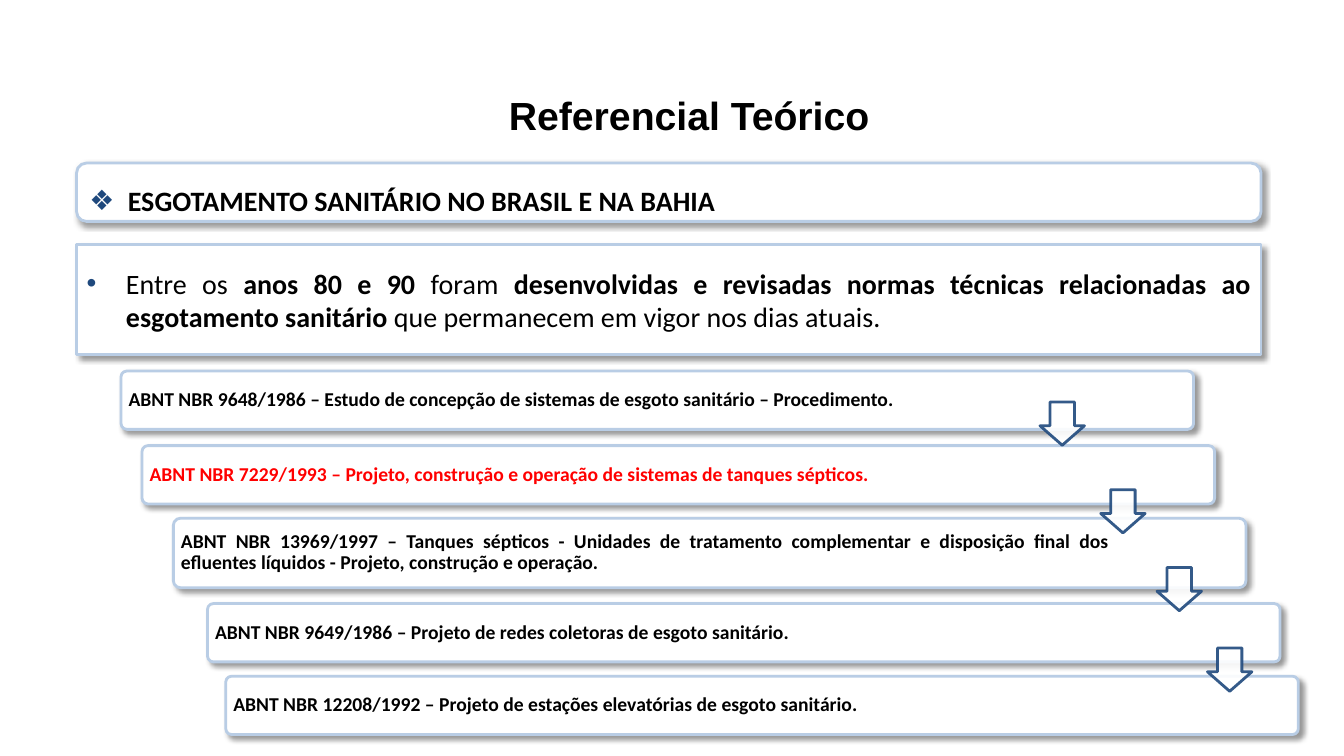
from lxml.etree import SubElement
from pptx import Presentation
from pptx.dml.color import RGBColor
from pptx.enum.shapes import MSO_SHAPE as Form
from pptx.enum.text import MSO_ANCHOR as Anchor, MSO_AUTO_SIZE as Fit, PP_ALIGN as Align
from pptx.oxml.ns import qn
from pptx.util import Cm, Pt

BLACK, WHITE, RED = "000000", "FFFFFF", "FF0000"
NAVY, PALE = "1F497D", "B9CDE5"


def color(code):
    return RGBColor.from_string(code)


def node(parent, tag, **attrs):
    return SubElement(parent, qn(tag), attrs)


class Deck:
    font = "Calibri"
    inset = 0.15

    def __init__(self, wide, high):
        self.prs = Presentation()
        self.prs.slide_width, self.prs.slide_height = Cm(wide), Cm(high)
        self.slide = self.prs.slides.add_slide(self.prs.slide_layouts[1])

    def place(self, shape, box):
        shape.left, shape.top, shape.width, shape.height = map(Cm, box)

    def paint(self, shape, line):
        shape.fill.solid()
        shape.fill.fore_color.rgb = color(WHITE)
        shape.line.color.rgb = color(line)
        shape.line.width = Pt(2)
        shape.shadow.inherit = False

    def shade(self, shape):
        """Cast a soft shadow to the lower right."""
        effects = shape._element.spPr.find(qn("a:effectLst"))
        outer = node(effects, "a:outerShdw", blurRad=str(Pt(4)), dist=str(Pt(3)),
                     dir="2700000", algn="tl", rotWithShape="0")
        tint = node(outer, "a:srgbClr", val=BLACK)
        node(tint, "a:alpha", val="40000")

    def label(self, shape, runs, size, align=Align.JUSTIFY, gap=1, bullet=None,
              hang=0, ink=BLACK, font=None):
        """Fill the shape with one paragraph of (text, bold) runs."""
        frame = shape.text_frame
        frame.auto_size = Fit.NONE
        frame.word_wrap = True
        frame.vertical_anchor = Anchor.MIDDLE
        para = frame.paragraphs[0]
        para.alignment = align
        para.line_spacing = gap
        para.space_before = Pt(0)
        if bullet:
            props = para._p.get_or_add_pPr()
            props.set("marL", str(Cm(hang)))
            props.set("indent", str(-Cm(hang)))
            node(node(props, "a:buClr"), "a:srgbClr", val=NAVY)
            node(props, "a:buFont", typeface="Arial")
            node(props, "a:buChar", char=bullet)
        for text, bold in runs:
            run = para.add_run()
            run.text = text
            run.font.name = font or self.font
            run.font.size = Pt(size)
            run.font.bold = bold
            run.font.color.rgb = color(ink)

    def title(self, text, box):
        shape = self.slide.shapes.title
        self.place(shape, box)
        self.label(shape, [(text, True)], 28, Align.LEFT, font="Arial")
        shape.text_frame.word_wrap = False

    def body(self, runs, box):
        shape = self.slide.placeholders[1]
        self.place(shape, box)
        self.paint(shape, PALE)
        self.shade(shape)
        self.label(shape, runs, 20, bullet="•", hang=0.99)

    def panel(self, box, curve):
        shape = self.slide.shapes.add_shape(Form.ROUNDED_RECTANGLE, *map(Cm, box))
        shape.adjustments[0] = curve
        self.paint(shape, PALE)
        self.shade(shape)
        return shape

    def header(self, text, box):
        shape = self.panel(box, 0.17)
        self.label(shape, [(text, True)], 20, gap=1.5, bullet="❖", hang=0.97)

    def card(self, text, left, top, high, ink):
        self.panel((left, top, 27.03, high), 0.1)
        box = left + 0.04, top + 0.04, 23.7, high - 0.08
        shape = self.slide.shapes.add_textbox(*map(Cm, box))
        frame = shape.text_frame
        frame.margin_left = frame.margin_right = Cm(self.inset)
        frame.margin_top = frame.margin_bottom = Cm(self.inset)
        self.label(shape, [(text, True)], 14, gap=0.9, ink=ink)

    def arrow(self, left, top):
        shape = self.slide.shapes.add_shape(
            Form.DOWN_ARROW, Cm(left), Cm(top), Cm(1.12), Cm(1.09))
        shape.adjustments[0], shape.adjustments[1] = 0.55, 0.45
        self.paint(shape, NAVY)
        for tint in shape._element.spPr.iter(qn("a:srgbClr")):
            node(tint, "a:alpha", val="90000")


CARDS = [
    ("ABNT NBR 9648/1986 – Estudo de concepção de sistemas de esgoto sanitário – "
     "Procedimento.", 3.05, 9.35, 1.47, BLACK),
    ("ABNT NBR 7229/1993 – Projeto, construção e operação de sistemas de tanques "
     "sépticos.", 3.58, 11.23, 1.47, RED),
    ("ABNT NBR 13969/1997 – Tanques sépticos - Unidades de tratamento complementar "
     "e disposição final dos efluentes líquidos - Projeto, construção e operação.",
     4.37, 13.06, 1.75, BLACK),
    ("ABNT NBR 9649/1986 – Projeto de redes coletoras de esgoto sanitário.",
     5.23, 15.21, 1.47, BLACK),
    ("ABNT NBR 12208/1992 – Projeto de estações elevatórias de esgoto sanitário.",
     5.69, 17.04, 1.47, BLACK),
]
ARROWS = [(26.21, 10.13), (27.74, 12.34), (29.16, 14.3), (30.43, 16.33)]


def main():
    deck = Deck(33.87, 19.05)
    deck.title("Referencial Teórico", (12.57, 2.18, 9.7, 1.45))
    deck.body([
        ("Entre os ", False),
        ("anos 80 e 90 ", True),
        ("foram ", False),
        ("desenvolvidas e revisadas normas técnicas relacionadas ao "
         "esgotamento sanitário", True),
        (" que permanecem em vigor nos dias atuais.", False),
    ], (1.93, 6.17, 29.85, 2.77))
    deck.header("ESGOTAMENTO SANITÁRIO NO BRASIL E NA BAHIA", (1.93, 4.11, 29.85, 1.47))
    for card in CARDS:
        deck.card(*card)
    for spot in ARROWS:
        deck.arrow(*spot)
    deck.prs.save("out.pptx")


if __name__ == "__main__":
    main()
